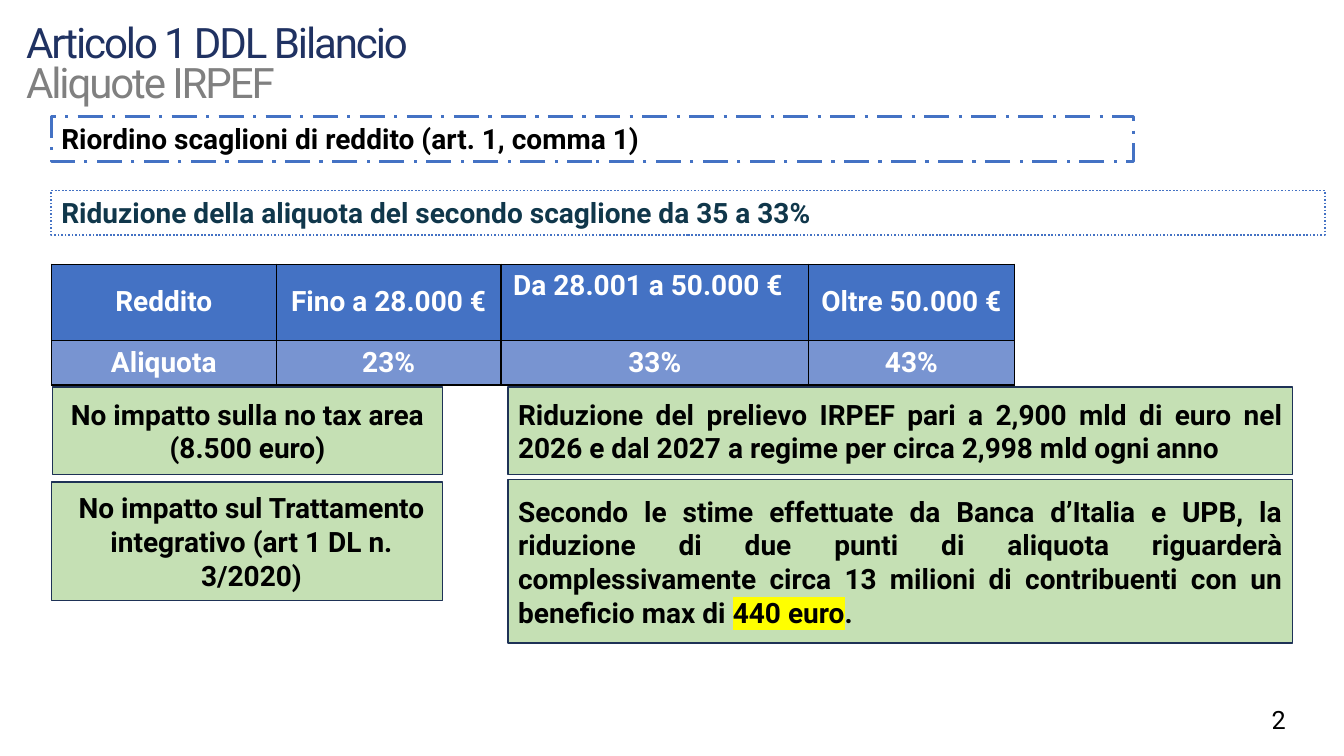
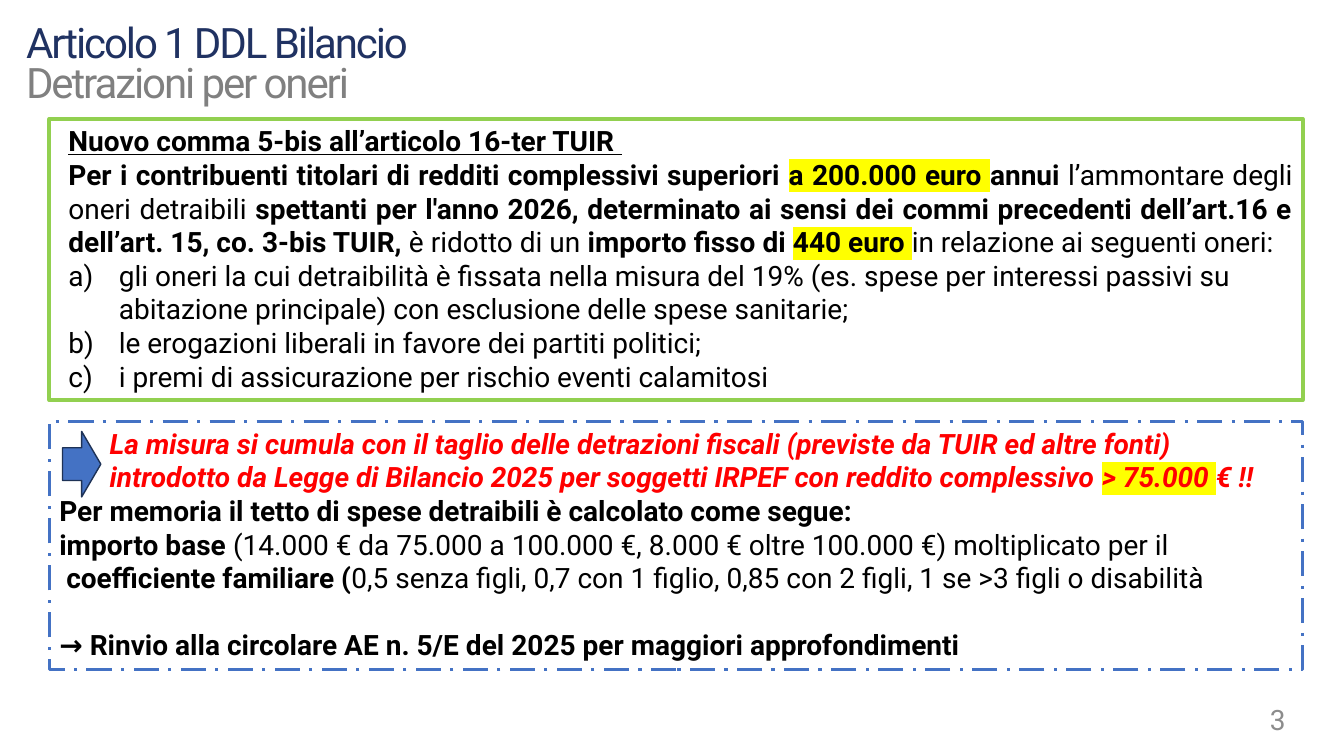
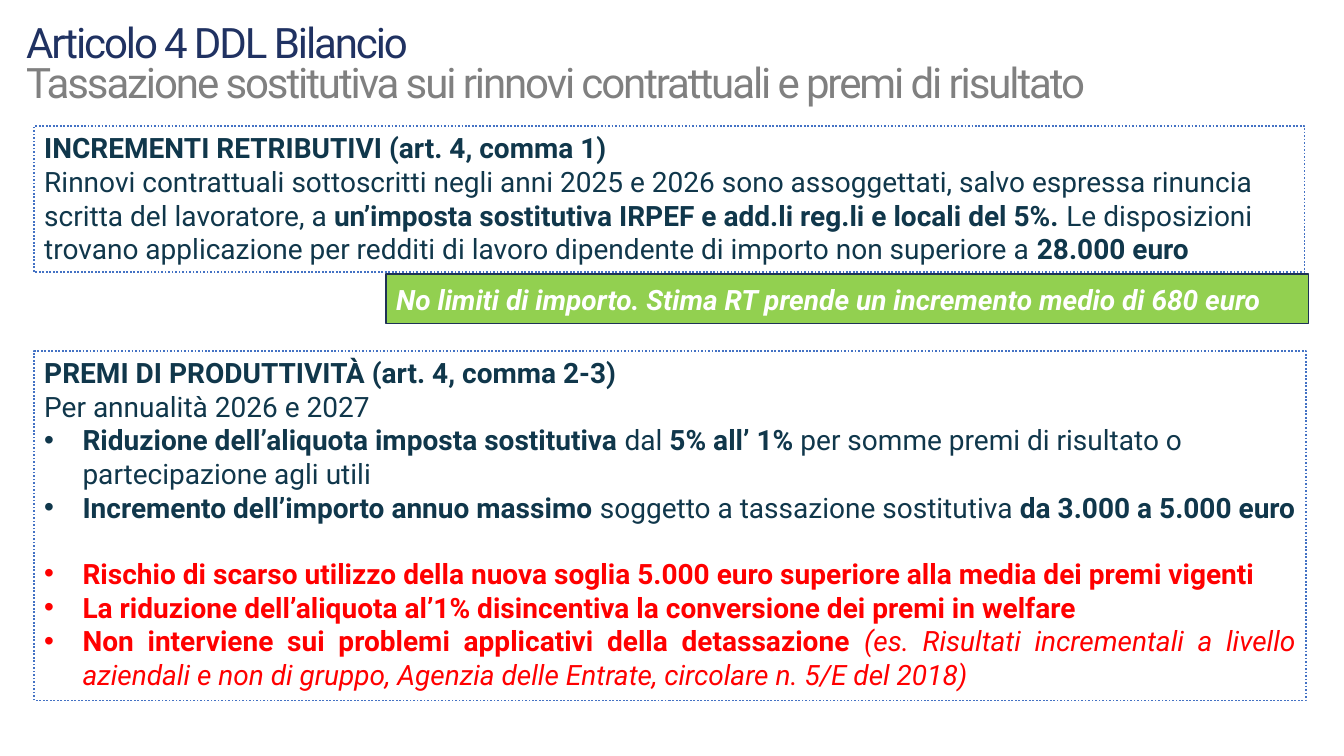
import lxml.etree
import pptx
import pptx.dml.color
import pptx.enum.dml
import pptx.enum.shapes
import pptx.enum.text
import pptx.oxml.ns
import pptx.util

Inches = pptx.util.Inches
Pt = pptx.util.Pt
RGBColor = pptx.dml.color.RGBColor
Align = pptx.enum.text.PP_ALIGN
Anchor = pptx.enum.text.MSO_ANCHOR
Dash = pptx.enum.dml.MSO_LINE
Preset = pptx.enum.shapes.MSO_SHAPE
qn = pptx.oxml.ns.qn

BLACK = RGBColor(0x00, 0x00, 0x00)
WHITE = RGBColor(0xFF, 0xFF, 0xFF)
RED = RGBColor(0xFF, 0x00, 0x00)
YELLOW = RGBColor(0xFF, 0xFF, 0x00)
NAVY = RGBColor(0x20, 0x32, 0x62)
EDGE = RGBColor(0x1E, 0x32, 0x56)
TEAL = RGBColor(0x10, 0x37, 0x4B)
BLUE = RGBColor(0x44, 0x72, 0xC4)
LIGHT_BLUE = RGBColor(0x78, 0x94, 0xD1)
GREEN = RGBColor(0x92, 0xD0, 0x50)
PALE_GREEN = RGBColor(0xC5, 0xE0, 0xB4)
GREY = RGBColor(0x80, 0x80, 0x80)
NUMBER_GREY = RGBColor(0x8C, 0x8C, 0x8C)

FONT = "Roboto"
EMPTY_LINE = Pt(23.4)
BOLD = {"bold": True}
MARKED = {"bold": True, "highlight": YELLOW}
WARNING = {"bold": True, "italic": True, "color": RED}
RISK = {"bold": True, "color": RED}
BULLET = {"margin": 0.38, "indent": -0.38, "bullet": "•"}
LETTER = {"margin": 0.59, "indent": -0.5, "bullet": "alphaLcParenR"}

DASHED = {"line": BLUE, "weight": 2.25, "dash": Dash.LONG_DASH_DOT}
DOTTED = {"line": BLUE, "weight": 1.25, "dash": Dash.ROUND_DOT}
FRAMED = {"line": GREEN, "weight": 2.75}
PALE = {"fill": PALE_GREEN, "line": EDGE, "anchor": Anchor.MIDDLE}
BRIGHT = {"fill": GREEN, "line": EDGE, "anchor": Anchor.MIDDLE}


def add_run(paragraph, text, color=BLACK, size=20, highlight=None, spacing=None, **values):
    run = paragraph.add_run()
    run.text = text
    for name, value in {"name": FONT, "size": Pt(size), **values}.items():
        setattr(run.font, name, value)
    run.font.color.rgb = color
    properties = run.font._element
    if spacing:
        properties.set("spc", str(spacing))
    if highlight:
        mark = lxml.etree.Element(qn("a:highlight"))
        lxml.etree.SubElement(mark, qn("a:srgbClr"), val=str(highlight))
        properties.find(qn("a:solidFill")).addnext(mark)


def set_paragraph(paragraph, margin=0, indent=0, bullet=None, **values):
    for name, value in values.items():
        setattr(paragraph, name, value)
    properties = paragraph._p.get_or_add_pPr()
    properties.set("marL", str(Inches(margin)))
    properties.set("indent", str(Inches(indent)))
    if bullet == "•":
        lxml.etree.SubElement(properties, qn("a:buFont"), typeface="Arial")
        lxml.etree.SubElement(properties, qn("a:buChar"), char=bullet)
    elif bullet:
        lxml.etree.SubElement(properties, qn("a:buAutoNum"), type=bullet)


def write_text(frame, paragraphs, anchor=Anchor.TOP, color=BLACK):
    frame.word_wrap = True
    frame.vertical_anchor = anchor
    for index, (layout, runs) in enumerate(paragraphs):
        paragraph = frame.add_paragraph() if index else frame.paragraphs[0]
        set_paragraph(paragraph, **{"alignment": Align.LEFT, **layout})
        for text, style in runs:
            add_run(paragraph, text, **{"color": color, **style})


def add_panel(slide, box, paragraphs, fill=None, line=EDGE, weight=1, dash=None,
              anchor=Anchor.TOP, color=BLACK, preset=Preset.RECTANGLE):
    shape = slide.shapes.add_shape(preset, *map(Inches, box))
    shape.shadow.inherit = False
    if fill is None:
        shape.fill.background()
    else:
        shape.fill.solid()
        shape.fill.fore_color.rgb = fill
    shape.line.color.rgb = line
    shape.line.width = Pt(weight)
    if dash:
        shape.line.dash_style = dash
    write_text(shape.text_frame, paragraphs, anchor, color)


def add_title(slide, article, topic):
    box = slide.shapes.add_textbox(*map(Inches, (0.16, 0.23, 12.26, 0.89)))
    write_text(box.text_frame, [
        ({"line_spacing": Pt(28)}, [(text, {"size": 30, "spacing": -150, "color": color})])
        for text, color in ((article, NAVY), (topic, GREY))])


def add_page_number(slide, number, **style):
    box = slide.shapes.add_textbox(*map(Inches, (9.43, 6.96, 3.42, 0.35)))
    write_text(box.text_frame, [({"alignment": Align.RIGHT}, [(number, style)])], Anchor.MIDDLE)


def border_cell(cell):
    properties = cell._tc.get_or_add_tcPr()
    for index, side in enumerate(("lnL", "lnR", "lnT", "lnB")):
        border = lxml.etree.Element(qn("a:" + side), w=str(Pt(1)))
        fill = lxml.etree.SubElement(border, qn("a:solidFill"))
        lxml.etree.SubElement(fill, qn("a:srgbClr"), val=str(BLACK))
        properties.insert(index, border)


def add_rate_table(slide, left, top):
    rows = (("Reddito", "Fino a 28.000 €", "Da 28.001 a 50.000 €", "Oltre 50.000 €"),
            ("Aliquota", "23%", "33%", "43%"))
    widths, heights = (2.23, 2.23, 3.05, 2.04), (0.76, 0.44)
    box = (left, top, sum(widths), sum(heights))
    table = slide.shapes.add_table(len(rows), len(widths), *map(Inches, box)).table
    for column, width in zip(table.columns, widths):
        column.width = Inches(width)
    for row, height, texts, fill in zip(table.rows, heights, rows, (BLUE, LIGHT_BLUE)):
        row.height = Inches(height)
        for cell, text in zip(row.cells, texts):
            cell.fill.solid()
            cell.fill.fore_color.rgb = fill
            border_cell(cell)
            write_text(cell.text_frame, [({"alignment": Align.CENTER}, [(text, BOLD)])], color=WHITE)
            cell.vertical_anchor = Anchor.MIDDLE
    middle_band = table.cell(0, 2)
    middle_band.vertical_anchor = Anchor.TOP
    middle_band.margin_left = Inches(0.12)
    middle_band.text_frame.paragraphs[0].alignment = Align.LEFT


def build_rates(slide):
    add_title(slide, "Articolo 1 DDL Bilancio", "Aliquote IRPEF")
    add_page_number(slide, "2", size=18)
    add_panel(slide, (0.51, 1.16, 10.73, 0.44),
              [({}, [("Riordino scaglioni di reddito (art. 1, comma 1)", BOLD)])], **DASHED)
    add_panel(slide, (0.51, 1.89, 12.63, 0.44),
              [({}, [("Riduzione della aliquota del secondo scaglione da 35 a 33%", BOLD)])],
              color=TEAL, **DOTTED)
    add_rate_table(slide, 0.51, 2.62)
    centred, justified = {"alignment": Align.CENTER}, {"alignment": Align.JUSTIFY}
    effects = (
        ((0.52, 3.84, 3.87, 0.87), centred,
         [("No impatto sulla no tax area (8.500 euro)", BOLD)]),
        ((0.51, 4.78, 3.88, 1.18), {**centred, "margin": 0.09},
         [("No impatto sul Trattamento integrativo (art 1 DL n. 3/2020)", BOLD)]),
        ((5.04, 3.84, 7.78, 0.87), justified,
         [("Riduzione del prelievo IRPEF pari a 2,900 mld di euro nel 2026 e dal 2027 "
           "a regime per circa 2,998 mld ogni anno", BOLD)]),
        ((5.04, 4.76, 7.78, 1.62), justified,
         [("Secondo le stime effettuate da Banca d’Italia e UPB, la riduzione di due punti "
           "di aliquota riguarderà complessivamente circa 13 milioni di contribuenti con un "
           "beneficio max di ", BOLD), ("440 euro", MARKED), (".", BOLD)]),
    )
    for box, layout, runs in effects:
        add_panel(slide, box, [(layout, runs)], **PALE)


def build_deductions(slide):
    add_title(slide, "Articolo 1 DDL Bilancio", "Detrazioni per oneri")
    add_page_number(slide, "3", color=NUMBER_GREY)
    add_panel(slide, (0.49, 4.18, 12.43, 2.46), [
        ({"margin": 0.5}, [
            ("La misura si cumula con il taglio delle detrazioni fiscali (previste da TUIR ed "
             "altre fonti) introdotto da Legge di Bilancio 2025 per soggetti IRPEF con reddito "
             "complessivo ", WARNING),
            ("> 75.000 ", {**WARNING, **MARKED}), ("€ !!", WARNING)]),
        ({}, [("Per memoria il tetto di spese detraibili è calcolato come segue:", BOLD)]),
        ({}, [("importo base ", BOLD),
              ("(14.000 € da 75.000 a 100.000 €, 8.000 € oltre 100.000 €) moltiplicato per il", {})]),
        ({}, [(" coefficiente familiare (", BOLD),
              ("0,5 senza figli, 0,7 con 1 figlio, 0,85 con 2 figli, 1 se >3 figli o disabilità", {})]),
        ({"space_before": EMPTY_LINE}, [
            ("→ Rinvio alla circolare AE n. 5/E del 2025 per maggiori approfondimenti", BOLD)]),
    ], **DASHED)
    lead = {"alignment": Align.JUSTIFY, "margin": 0.09}
    charges = (
        "gli oneri la cui detraibilità è fissata nella misura del 19% (es. spese per interessi "
        "passivi su abitazione principale) con esclusione delle spese sanitarie;",
        "le erogazioni liberali in favore dei partiti politici;",
        "i premi di assicurazione per rischio eventi calamitosi",
    )
    add_panel(slide, (0.49, 1.18, 12.43, 2.79), [
        (lead, [("Nuovo comma 5-bis all’articolo 16-ter TUIR ", {**BOLD, "underline": True})]),
        (lead, [
            ("Per i contribuenti titolari di redditi complessivi superiori ", BOLD),
            ("a 200.000 euro ", MARKED), ("annui ", BOLD),
            ("l’ammontare degli oneri detraibili ", {}),
            ("spettanti per l'anno 2026, determinato ai sensi dei commi precedenti dell’art.16 e "
             "dell’art. 15, co. 3-bis TUIR,", BOLD),
            (" è ridotto di un ", {}), ("importo fisso di ", BOLD), ("440 euro ", MARKED),
            ("in relazione ai seguenti oneri: ", {})]),
        *((LETTER, [(charge, {})]) for charge in charges),
    ], **FRAMED)
    add_panel(slide, (0.62, 4.28, 0.38, 0.65), [], fill=BLUE, preset=Preset.RIGHT_ARROW)


def build_substitute_tax(slide):
    add_title(slide, "Articolo 4 DDL Bilancio",
              "Tassazione sostitutiva sui rinnovi contrattuali e premi di risultato")
    add_panel(slide, (0.34, 1.25, 12.6, 1.45), [
        ({}, [("INCREMENTI RETRIBUTIVI (art. 4, comma 1)", BOLD)]),
        ({}, [("Rinnovi contrattuali sottoscritti negli anni 2025 e 2026 sono assoggettati, salvo "
               "espressa rinuncia scritta del lavoratore, a ", {}),
              ("un’imposta sostitutiva IRPEF e add.li reg.li e locali del 5%. ", BOLD),
              ("Le disposizioni trovano applicazione per redditi di lavoro dipendente di importo "
               "non superiore a ", {}), ("28.000 euro", BOLD)]),
    ], color=TEAL, **DOTTED)
    add_panel(slide, (3.83, 2.72, 9.15, 0.49), [
        ({}, [("No limiti di importo. Stima RT prende un incremento medio di 680 euro",
               {**BOLD, "italic": True})])], color=WHITE, **BRIGHT)
    risk_layout = {**BULLET, "alignment": Align.JUSTIFY}
    add_panel(slide, (0.34, 3.48, 12.61, 3.47), [
        ({}, [("PREMI DI PRODUTTIVITÀ (art. 4, comma 2-3)", BOLD)]),
        ({}, [("Per annualità 2026 e 2027", {})]),
        (BULLET, [("Riduzione dell’aliquota imposta sostitutiva ", BOLD), ("dal ", {}),
                  ("5% all’ 1% ", BOLD),
                  ("per somme premi di risultato o partecipazione agli utili", {})]),
        (BULLET, [("Incremento dell’importo annuo massimo ", BOLD),
                  ("soggetto a tassazione sostitutiva ", {}), ("da 3.000 a 5.000 euro", BOLD)]),
        ({**risk_layout, "space_before": EMPTY_LINE}, [
            ("Rischio di scarso utilizzo della nuova soglia 5.000 euro superiore alla media dei "
             "premi vigenti", RISK)]),
        (risk_layout, [
            ("La riduzione dell’aliquota al’1% disincentiva la conversione dei premi in welfare", RISK)]),
        (risk_layout, [
            ("Non interviene sui problemi applicativi della detassazione ", RISK),
            ("(es. Risultati incrementali a livello aziendali e non di gruppo, Agenzia delle "
             "Entrate, circolare n. 5/E del 2018)", {"color": RED, "italic": True})]),
    ], color=TEAL, **DOTTED)


def main():
    presentation = pptx.Presentation()
    presentation.slide_width = Inches(13.33)
    presentation.slide_height = Inches(7.5)
    for build in (build_rates, build_deductions, build_substitute_tax):
        build(presentation.slides.add_slide(presentation.slide_layouts[6]))
    presentation.save("out.pptx")


if __name__ == "__main__":
    main()
